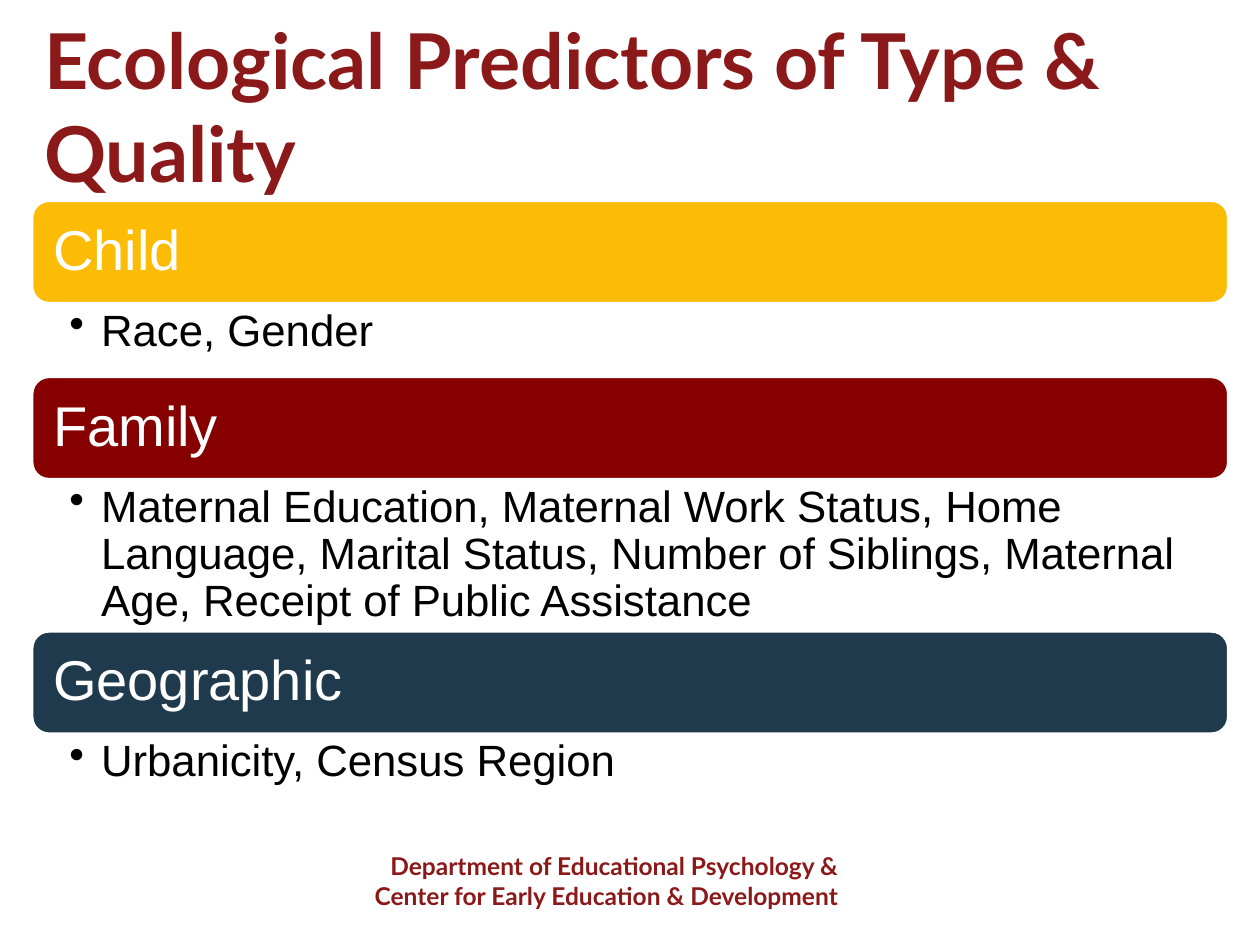
from lxml import etree
from pptx import Presentation
from pptx import util as u
from pptx.dml.color import RGBColor
from pptx.enum import shapes, text
from pptx.oxml import ns

CRIMSON = RGBColor(0x8C, 0x19, 0x19)
GOLD = RGBColor(0xFC, 0xBB, 0x04)
MAROON = RGBColor(0x86, 0x00, 0x00)
NAVY = RGBColor(0x1F, 0x39, 0x4D)
WHITE = RGBColor(0xFF, 0xFF, 0xFF)
BLACK = RGBColor(0x00, 0x00, 0x00)

LEFT, WIDTH = 0.64, 24.13
LIST_TOP, BAR_HEIGHT = 4.04, 2.08

# Heading, bar colour, details, height of the details in cm
GROUPS = [
    ("Child", GOLD, "Race, Gender", 1.47),
    ("Family", MAROON,
     "Maternal Education, Maternal Work Status, Home Language, Marital Status, "
     "Number of Siblings, Maternal Age, Receipt of Public Assistance", 3.05),
    ("Geographic", NAVY, "Urbanicity, Census Region", 1.47),
]


class PageBuilder:
    title_font = "Lato"
    body_font = "Arial"

    def __init__(self, page):
        self.page = page

    def set_text(self, box, words, font, size, color, bold=False,
                 align=text.PP_ALIGN.LEFT, anchor=text.MSO_ANCHOR.TOP, spacing=None):
        frame = box.text_frame
        frame.text = words
        frame.word_wrap = True
        frame.vertical_anchor = anchor
        for para in frame.paragraphs:
            para.alignment = align
            para.line_spacing = spacing
            for span in para.runs:
                span.font.name = font
                span.font.size = u.Pt(size)
                span.font.bold = bold
                span.font.color.rgb = color

    def pad(self, box, left, top, right, bottom):
        frame = box.text_frame
        frame.margin_left, frame.margin_top = u.Cm(left), u.Cm(top)
        frame.margin_right, frame.margin_bottom = u.Cm(right), u.Cm(bottom)

    def label(self, words, left, top, width, height, size, **layout):
        box = self.page.shapes.add_textbox(
            u.Cm(left), u.Cm(top), u.Cm(width), u.Cm(height))
        self.set_text(box, words, self.title_font, size, CRIMSON, bold=True, **layout)

    def bar(self, words, top, color):
        box = self.page.shapes.add_shape(
            shapes.MSO_SHAPE.ROUNDED_RECTANGLE,
            u.Cm(LEFT), u.Cm(top), u.Cm(WIDTH), u.Cm(BAR_HEIGHT))
        box.shadow.inherit = False
        box.fill.solid()
        box.fill.fore_color.rgb = color
        box.line.color.rgb = WHITE
        box.line.width = u.Pt(2)
        self.pad(box, 0.33, 0.33, 0.33, 0.33)
        self.set_text(box, words, self.body_font, 32, WHITE,
                      anchor=text.MSO_ANCHOR.MIDDLE, spacing=0.9)

    def details(self, words, top, height):
        box = self.page.shapes.add_textbox(
            u.Cm(LEFT), u.Cm(top), u.Cm(WIDTH), u.Cm(height))
        self.pad(box, 0.76, 0.1, 0.64, 0.1)
        self.set_text(box, words, self.body_font, 25, BLACK, spacing=0.9)
        # Hanging bullet
        for para in box.text_frame.paragraphs:
            props = para._p.get_or_add_pPr()
            props.set("marL", str(u.Cm(0.64)))
            props.set("indent", str(-u.Cm(0.64)))
            etree.SubElement(props, ns.qn("a:buChar"), char="•")


def main():
    deck = Presentation()
    deck.slide_width, deck.slide_height = u.Cm(25.4), u.Cm(19.05)
    builder = PageBuilder(deck.slides.add_slide(deck.slide_layouts[6]))

    # Footer and title
    builder.label("Department of Educational Psychology &\n"
                  "Center for Early Education & Development",
                  4.45, 17.04, 12.7, 1.45, 14, align=text.PP_ALIGN.RIGHT)
    builder.label("Ecological Predictors of Type & Quality",
                  LEFT, 1.07, WIDTH, 2.11, 44, anchor=text.MSO_ANCHOR.MIDDLE)

    # Stacked bars, each followed by its details
    top = LIST_TOP
    for heading, color, words, height in GROUPS:
        builder.bar(heading, top, color)
        builder.details(words, top + BAR_HEIGHT, height)
        top += BAR_HEIGHT + height

    deck.save("out.pptx")


if __name__ == "__main__":
    main()
